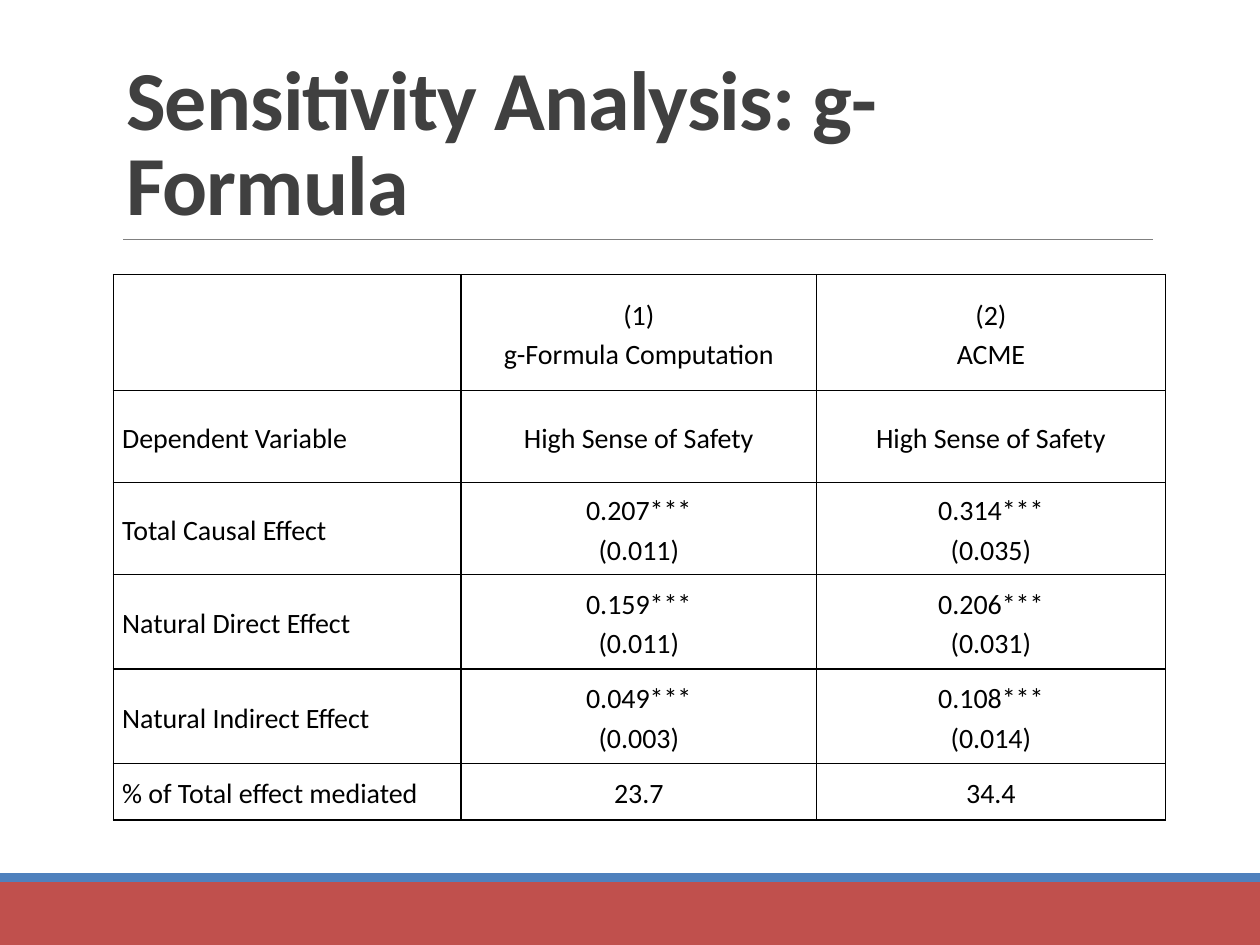
from lxml.etree import SubElement
from pptx import Presentation
from pptx.dml.color import RGBColor
from pptx.enum.shapes import MSO_CONNECTOR, MSO_SHAPE
from pptx.enum.text import MSO_ANCHOR, MSO_AUTO_SIZE, PP_ALIGN
from pptx.oxml import parse_xml
from pptx.oxml.ns import nsdecls, qn
from pptx.util import Inches, Pt

RED = RGBColor(0xC0, 0x50, 0x4D)
BLUE = RGBColor(0x4F, 0x81, 0xBD)
GRAY = RGBColor(0x80, 0x80, 0x80)
DARK = RGBColor(0x40, 0x40, 0x40)
BLACK = RGBColor(0, 0, 0)
FONT = "Calibri"

COL_WIDTHS = [2.76, 2.82, 2.77]
ROW_HEIGHTS = [0.92, 0.73, 0.73, 0.75, 0.75, 0.45]
ROWS = [
    ["", "(1)\ng-Formula Computation", "(2)\nACME"],
    ["Dependent Variable", "High Sense of Safety", "High Sense of Safety"],
    ["Total Causal Effect", "0.207***\n(0.011)", "0.314***\n(0.035)"],
    ["Natural Direct Effect", "0.159***\n(0.011)", "0.206***\n(0.031)"],
    ["Natural Indirect Effect", "0.049***\n(0.003)", "0.108***\n(0.014)"],
    ["% of Total effect mediated", "23.7", "34.4"],
]


def style_font(font, size, color, bold=False):
    font.name, font.size, font.bold = FONT, Pt(size), bold
    font.color.rgb = color


def add_band(slide, left, top, width, height, color):
    s = slide.shapes.add_shape(MSO_SHAPE.RECTANGLE, Inches(left), Inches(top),
                               Inches(width), Inches(height))
    s.shadow.inherit = False
    s.fill.solid()
    s.fill.fore_color.rgb = color
    s.line.fill.background()


def add_footer(slide, left, top, width, height):
    stripe = 0.07
    add_band(slide, left, top + stripe, width, height - stripe, RED)
    add_band(slide, left, top, width, stripe, BLUE)


def add_title(slide, left, top, width, height):
    # Rule under the title
    y = Inches(top + height)
    rule = slide.shapes.add_connector(MSO_CONNECTOR.STRAIGHT, Inches(left + 0.08), y,
                                      Inches(left + width), y)
    rule.line.color.rgb = GRAY
    rule.line.width = Pt(0.5)
    SubElement(rule.element.spPr, qn("a:effectLst"))

    # Title text
    s = slide.shapes.title
    s.left, s.top, s.width, s.height = map(Inches, (left, top, width, height))
    tf = s.text_frame
    tf.text = "Sensitivity Analysis: g-Formula"
    tf.word_wrap = True
    tf.auto_size = MSO_AUTO_SIZE.NONE
    tf.vertical_anchor = MSO_ANCHOR.BOTTOM
    p = tf.paragraphs[0]
    p.alignment = PP_ALIGN.LEFT
    p.line_spacing = 0.85
    r = p.runs[0]
    style_font(r.font, 48, DARK, bold=True)
    r.font._element.set("spc", "-50")


def add_borders(cell):
    tc_pr = cell._tc.get_or_add_tcPr()
    for i, side in enumerate(("lnL", "lnR", "lnT", "lnB")):
        tc_pr.insert(i, parse_xml(
            f'<a:{side} {nsdecls("a")} w="{Pt(1)}"><a:solidFill>'
            f'<a:srgbClr val="{BLACK}"/></a:solidFill></a:{side}>'))


def fill_cell(cell, text, alignment):
    cell.fill.background()
    add_borders(cell)
    cell.vertical_anchor = MSO_ANCHOR.MIDDLE
    cell.margin_left = cell.margin_right = Inches(0.07)
    cell.margin_top = cell.margin_bottom = 0
    cell.text_frame.text = text
    for p in cell.text_frame.paragraphs:
        p.alignment = alignment
        p.line_spacing = 1.15
        for r in p.runs:
            style_font(r.font, 16, BLACK)


def add_results_table(slide, left, top, width, height):
    table = slide.shapes.add_table(len(ROWS), len(COL_WIDTHS), Inches(left), Inches(top),
                                   Inches(width), Inches(height)).table
    table.first_row = table.horz_banding = False
    for column, w in zip(table.columns, COL_WIDTHS):
        column.width = Inches(w)
    for row, h, texts in zip(table.rows, ROW_HEIGHTS, ROWS):
        row.height = Inches(h)
        for i, (cell, text) in enumerate(zip(row.cells, texts)):
            fill_cell(cell, text, PP_ALIGN.CENTER if i else PP_ALIGN.LEFT)


def main():
    prs = Presentation()
    prs.slide_width, prs.slide_height = Inches(10), Inches(7.5)
    slide = prs.slides.add_slide(prs.slide_layouts[5])
    add_footer(slide, 0, 6.93, 10, 0.57)
    add_title(slide, 0.9, 0.31, 8.25, 1.59)
    add_results_table(slide, 0.9, 2.18, sum(COL_WIDTHS), sum(ROW_HEIGHTS))
    prs.save("out.pptx")


if __name__ == "__main__":
    main()
